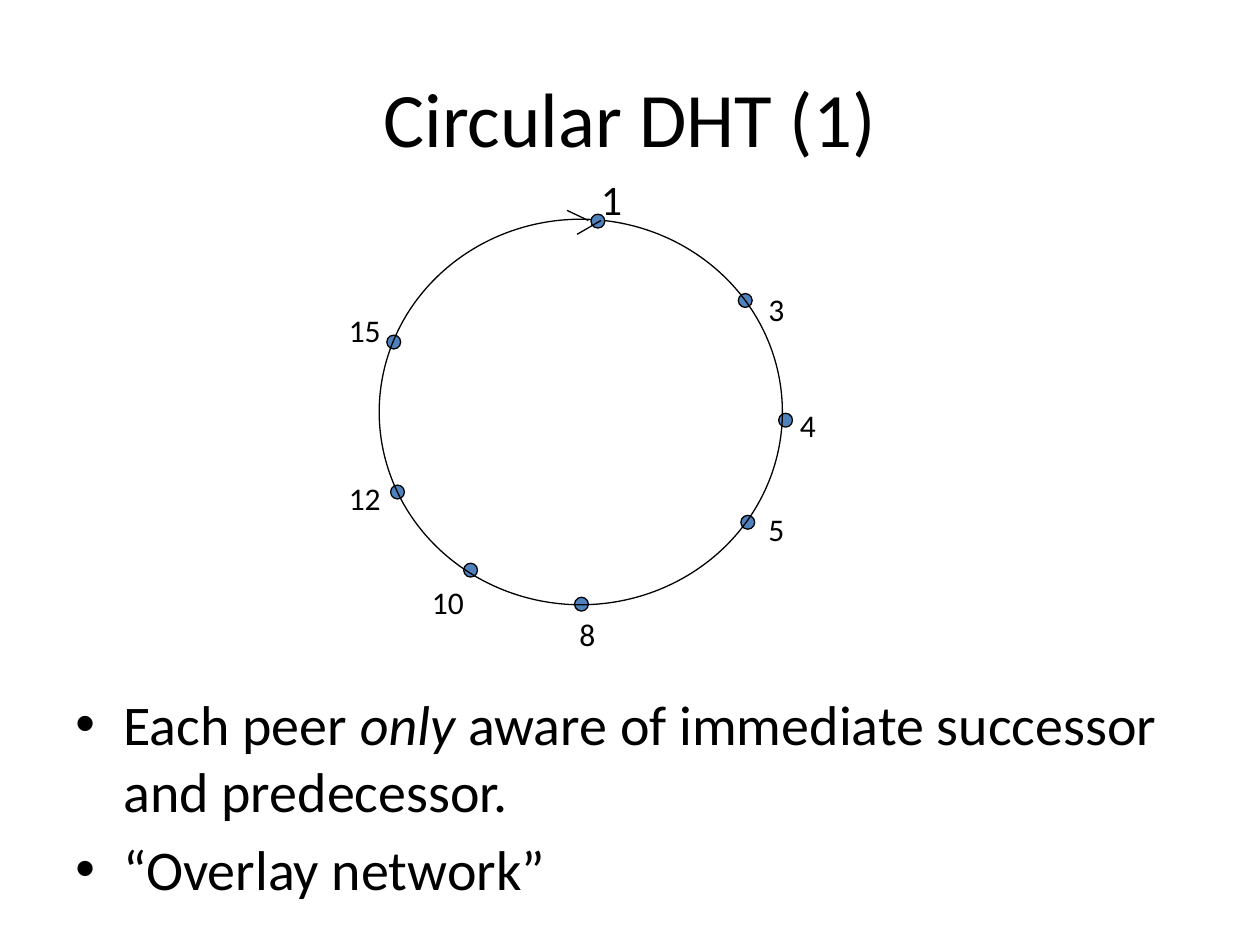
from dataclasses import dataclass
from typing import NamedTuple

from lxml.etree import SubElement
from pptx import Presentation
from pptx.dml.color import RGBColor
from pptx.enum.shapes import MSO_CONNECTOR as Connector, MSO_SHAPE as Shape
from pptx.enum.text import MSO_ANCHOR as Anchor, MSO_AUTO_SIZE as AutoSize, PP_ALIGN as Align
from pptx.oxml.ns import qn
from pptx.util import Inches, Pt


@dataclass(frozen=True)
class Theme:
    """Colours, font and sizes of the deck."""
    ink: RGBColor = RGBColor(0x00, 0x00, 0x00)
    node: RGBColor = RGBColor(0x4F, 0x81, 0xBD)
    font: str = "Calibri"
    title: int = 44
    body: int = 32
    first_label: int = 24
    label: int = 18
    line: float = 0.75


class Box(NamedTuple):
    """A rectangle in inches."""
    left: float
    top: float
    width: float
    height: float

    def inside(self, left, top, width, height):
        """Return a box placed relative to this one."""
        return Box(self.left + left, self.top + top, width, height)

    def lengths(self):
        """Return the four sides as slide lengths."""
        return [Inches(side) for side in self]


THEME = Theme()
DOT = 0.11
PEERS = [
    ("1", (1.68, -0.04), (1.66, -0.41)),
    ("3", (2.85, 0.59), (2.99, 0.51)),
    ("4", (3.17, 1.54), (3.24, 1.43)),
    ("5", (2.87, 2.35), (2.99, 2.26)),
    ("8", (1.55, 3.00), (1.49, 3.09)),
    ("10", (0.67, 2.73), (0.32, 2.84)),
    ("12", (0.09, 2.11), (-0.34, 2.01)),
    ("15", (0.06, 0.92), (-0.34, 0.68)),
]
ARROW = [((1.49, -0.07), (1.66, 0.01)), ((1.76, 0.01), (1.57, 0.12))]
BULLETS = [
    [("Each peer ", False), ("only", True),
     (" aware of immediate successor and predecessor.", False)],
    [("“Overlay network”", False)],
]


def add_span(para, text, size, italic=False):
    """Append one styled run to a paragraph."""
    span = para.add_run()
    span.text = text
    span.font.name = THEME.font
    span.font.size = Pt(size)
    span.font.italic = italic
    span.font.color.rgb = THEME.ink


def add_frame(shapes, box, wrap=True):
    """Add a text box and return its text frame."""
    frame = shapes.add_textbox(*box.lengths()).text_frame
    frame.word_wrap = wrap
    return frame


def add_ellipse(shapes, box, fill=None):
    """Add an outlined ellipse, filled when a colour is given."""
    ellipse = shapes.add_shape(Shape.OVAL, *box.lengths())
    ellipse.shadow.inherit = False
    if fill is None:
        ellipse.fill.background()
    else:
        ellipse.fill.solid()
        ellipse.fill.fore_color.rgb = fill
    ellipse.line.color.rgb = THEME.ink
    ellipse.line.width = Pt(THEME.line)


def add_title(page, box, text):
    """Write the centred title in its box."""
    frame = add_frame(page.shapes, box)
    frame.vertical_anchor = Anchor.MIDDLE
    para = frame.paragraphs[0]
    para.alignment = Align.CENTER
    add_span(para, text, THEME.title)


def add_ring(page, box):
    """Draw the ring of peers with their labels."""
    shapes = page.shapes.add_group_shape().shapes
    first, *others = [box.inside(*dot, DOT, DOT) for _, dot, _ in PEERS]
    for dot in others:
        add_ellipse(shapes, dot, THEME.node)
    add_ellipse(shapes, box)
    for index, (name, _, corner) in enumerate(PEERS):
        width = 0.37 if len(name) == 1 else 0.54
        frame = add_frame(shapes, box.inside(*corner, width, 0.5), wrap=False)
        frame.auto_size = AutoSize.SHAPE_TO_FIT_TEXT
        add_span(frame.paragraphs[0], name, THEME.label if index else THEME.first_label)
    add_ellipse(shapes, first, THEME.node)


def add_arrow(page, box):
    """Draw the two strokes that show the direction of the ring."""
    for stroke in ARROW:
        ends = [Inches(start + shift) for point in stroke
                for start, shift in zip((box.left, box.top), point)]
        line = page.shapes.add_connector(Connector.STRAIGHT, *ends)
        line.line.color.rgb = THEME.ink
        line.line.width = Pt(THEME.line)
        SubElement(line._element.spPr, qn("a:effectLst"))


def add_bullets(page, box, items):
    """Write the bulleted statements in their box."""
    frame = add_frame(page.shapes, box)
    for index, item in enumerate(items):
        para = frame.add_paragraph() if index else frame.paragraphs[0]
        para.space_before = Pt(THEME.body * 0.2)
        props = para._p.get_or_add_pPr()
        props.set("marL", str(Inches(0.38)))
        props.set("indent", str(Inches(-0.38)))
        SubElement(props, qn("a:buFont"), typeface="Arial")
        SubElement(props, qn("a:buChar"), char="•")
        for text, italic in item:
            add_span(para, text, THEME.body, italic)


def main():
    """Build and save the deck."""
    deck = Presentation()
    deck.slide_width, deck.slide_height = Inches(10), Inches(7.5)
    page = deck.slides.add_slide(deck.slide_layouts[6])
    ring = Box(3.01, 1.74, 3.2, 3.06)
    add_ring(page, ring)
    add_arrow(page, ring)
    add_title(page, Box(0.5, 0.3, 9, 1.25), "Circular DHT (1)")
    add_bullets(page, Box(0.5, 5.42, 9, 1.67), BULLETS)
    deck.save("out.pptx")


if __name__ == "__main__":
    main()
